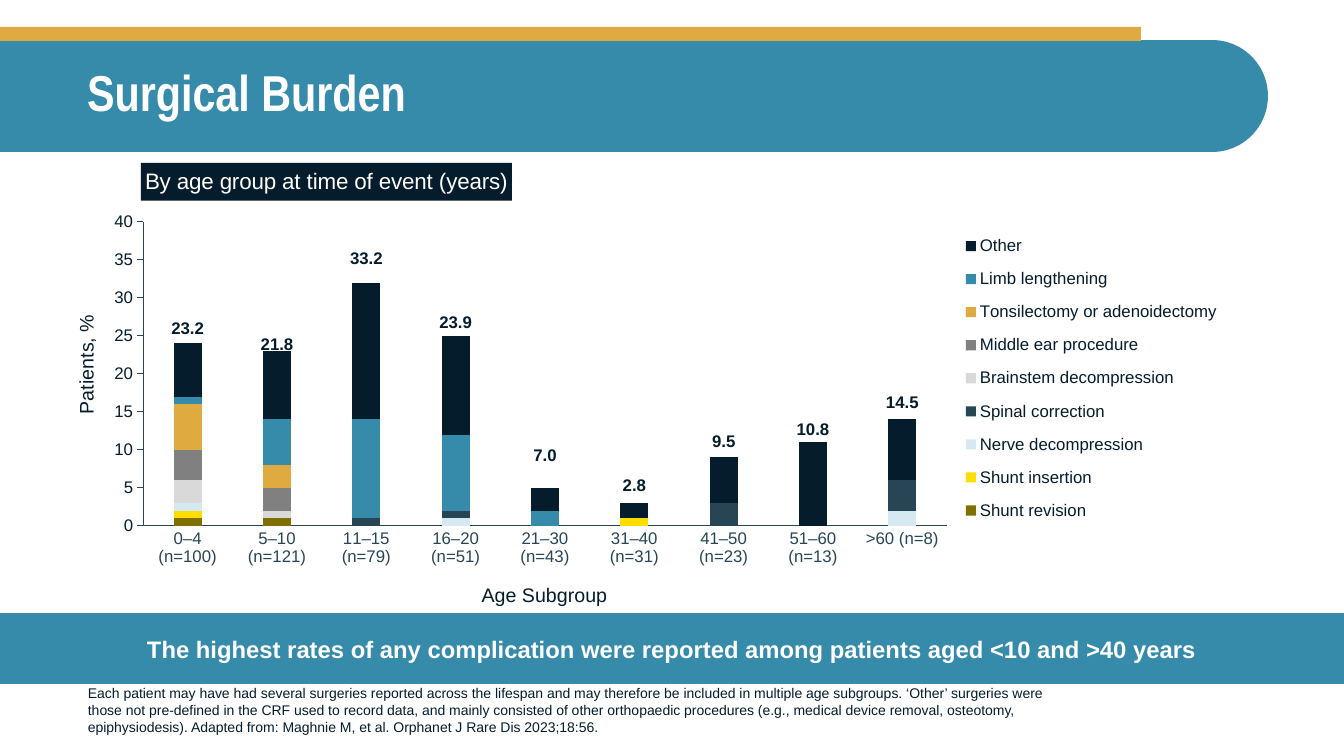
from pptx import Presentation
from pptx.chart.data import CategoryChartData
from pptx.dml.color import RGBColor
from pptx.enum.chart import XL_CHART_TYPE as ChartType, XL_LEGEND_POSITION as LegendPos, XL_TICK_MARK as Tick
from pptx.enum.shapes import MSO_SHAPE as Shape
from pptx.enum.text import MSO_ANCHOR as Anchor, MSO_AUTO_SIZE as AutoSize, PP_ALIGN as Align
from pptx.oxml import parse_xml
from pptx.oxml.ns import nsdecls, qn
from pptx.util import Emu, Pt

PX = 914400 / 100.8
NAVY = RGBColor(0x05, 0x1C, 0x2C)
TEAL = RGBColor(0x36, 0x8B, 0xAB)
GOLD = RGBColor(0xDF, 0xAA, 0x40)
SLATE = RGBColor(0x27, 0x45, 0x54)
WHITE = RGBColor(0xFF, 0xFF, 0xFF)
GREY = RGBColor(0x80, 0x80, 0x80)
PALE_GREY = RGBColor(0xD9, 0xD9, 0xD9)
PALE_BLUE = RGBColor(0xD4, 0xE9, 0xF1)
YELLOW = RGBColor(0xFE, 0xDD, 0x00)
OLIVE = RGBColor(0x7F, 0x6E, 0x00)

AGE_GROUPS = ["0–4 (n=100)", "5–10 (n=121)", "11–15 (n=79)", "16–20 (n=51)", "21–30 (n=43)",
              "31–40 (n=31)", "41–50 (n=23)", "51–60 (n=13)", ">60 (n=8)"]
SURGERIES = [
    ("Shunt revision", OLIVE, [1, 1, None, None, None, None, None, None, None]),
    ("Shunt insertion", YELLOW, [1, None, None, None, 0, 1, None, None, None]),
    ("Nerve decompression", PALE_BLUE, [1, None, 0, 1, 0, None, None, None, 2]),
    ("Spinal correction", SLATE, [None, None, 1, 1, 0, None, 3, None, 4]),
    ("Brainstem decompression", PALE_GREY, [3, 1, None, None, 0, None, None, None, None]),
    ("Middle ear procedure", GREY, [4, 3, 0, None, None, None, None, None, None]),
    ("Tonsilectomy or adenoidectomy", GOLD, [6, 3, 0, None, None, None, None, None, None]),
    ("Limb lengthening", TEAL, [1, 6, 13, 10, 2, None, None, None, None]),
    ("Other", NAVY, [7, 9, 18, 13, 3, 2, 6, 11, 8]),
]
TOTALS = [("23.2", 328), ("21.8", 344), ("33.2", 258), ("23.9", 322), ("7.0", 455),
          ("2.8", 485), ("9.5", 441), ("10.8", 429), ("14.5", 402)]


def px(*lengths):
    """Turn pixel lengths into EMU."""
    return [Emu(round(length * PX)) for length in lengths]


def write(frame, text, size, color=NAVY, bold=False, font="Arial", align=Align.LEFT,
          anchor=Anchor.TOP, wrap=True, spacing=1.0):
    """Put one formatted paragraph into a text frame."""
    frame.auto_size = AutoSize.NONE
    frame.word_wrap = wrap
    frame.vertical_anchor = anchor
    paragraph = frame.paragraphs[0]
    paragraph.alignment = align
    paragraph.line_spacing = spacing
    paragraph.space_before = Pt(0)
    run = paragraph.add_run()
    run.text = text
    set_font(run.font, size, color, bold, font)


def set_font(target, size, color=NAVY, bold=False, font="Arial"):
    """Set the look of a font object."""
    target.name, target.size, target.bold = font, Pt(size), bold
    target.color.rgb = color


def add_label(slide, box, text, size, **look):
    """Add a text box holding one label."""
    label = slide.shapes.add_textbox(*px(*box))
    write(label.text_frame, text, size, **look)
    return label


def add_block(slide, kind, box, color):
    """Add a flat coloured shape."""
    block = slide.shapes.add_shape(kind, *px(*box))
    block.shadow.inherit = False
    block.fill.solid()
    block.fill.fore_color.rgb = color
    block.line.fill.background()
    return block


def move(placeholder, box):
    """Move a placeholder to a box."""
    placeholder.left, placeholder.top, placeholder.width, placeholder.height = px(*box)


def add_header(slide, box):
    """Draw the rounded band, the gold strip and the title."""
    left, top, width, height = box
    turned = (left + (width - height) / 2, top + (height - width) / 2, height, width)
    band = add_block(slide, Shape.ROUND_2_SAME_RECTANGLE, turned, TEAL)
    band.rotation = 270
    band.adjustments[0], band.adjustments[1] = 0, 0.5
    add_block(slide, Shape.RECTANGLE, (left, top - 13, 1141, 14), GOLD)
    title = slide.shapes.title
    move(title, (left + 77, top, 1190, 111))
    write(title.text_frame, "Surgical Burden", 36, color=WHITE, bold=True,
          font="Arial Narrow", anchor=Anchor.MIDDLE, spacing=0.9)
    tree = slide.shapes.element
    tree.remove(title.element)
    tree.append(title.element)


def set_layout(element, index, box, outer):
    """Place a chart part by a box measured inside the chart."""
    old = element.find(qn("c:layout"))
    if old is not None:
        element.remove(old)
    x, y, w, h = (round(a / b, 4) for a, b in zip(box, (outer[2], outer[3]) * 2))
    target = '<c:layoutTarget val="inner"/>' if element.tag == qn("c:plotArea") else ""
    size = f'<c:w val="{w}"/><c:h val="{h}"/>' if w else ""
    element.insert(index, parse_xml(
        f'<c:layout {nsdecls("c")}><c:manualLayout>{target}<c:xMode val="edge"/>'
        f'<c:yMode val="edge"/><c:x val="{x}"/><c:y val="{y}"/>{size}</c:manualLayout></c:layout>'))


def add_surgery_chart(slide, box):
    """Add the stacked columns with totals and axis titles."""
    data = CategoryChartData(number_format="0")
    data.categories = AGE_GROUPS
    for name, _, values in SURGERIES:
        data.add_series(name, values)
    chart = slide.shapes.add_chart(ChartType.COLUMN_STACKED, *px(*box), data).chart
    set_font(chart.font, 10)
    columns = chart.plots[0]
    columns.gap_width, columns.overlap, columns.vary_by_categories = 219, 100, False
    for series, (_, color, _) in zip(columns.series, SURGERIES):
        series.format.fill.solid()
        series.format.fill.fore_color.rgb = color

    ages, percent = chart.category_axis, chart.value_axis
    percent.minimum_scale, percent.maximum_scale, percent.major_unit = 0, 40, 5
    percent.has_major_gridlines = False
    percent.tick_labels.number_format = "0"
    percent.tick_labels.number_format_is_linked = False
    for axis, tick, color in ((ages, Tick.NONE, SLATE), (percent, Tick.OUTSIDE, NAVY)):
        axis.major_tick_mark, axis.minor_tick_mark = tick, Tick.NONE
        set_font(axis.tick_labels.font, 12, color)
        axis.format.line.color.rgb = SLATE
        axis.format.line.width = Pt(0.75)

    chart.has_legend = True
    chart.legend.position = LegendPos.RIGHT
    chart.legend.include_in_layout = False
    set_font(chart.legend.font, 12)
    chart.has_title = True
    heading = chart.chart_title
    heading.format.fill.solid()
    heading.format.fill.fore_color.rgb = NAVY
    run = heading.text_frame.paragraphs[0].add_run()
    run.text = "By age group at time of event (years)"
    set_font(run.font, 16, WHITE)
    plot = (65, 66, 804, 304)
    for tag, index, part in (("c:title", 1, (63, 7, 0, 0)), ("c:plotArea", 0, plot),
                             ("c:legend", 1, (882, 66, 263, 313))):
        set_layout(chart.element.find(".//" + qn(tag)), index, part, box)

    left, top = box[:2]
    add_label(slide, (left - 57, top + 186, 130, 34), "Patients, %", 14).rotation = 270
    step = plot[2] / len(TOTALS)
    for i, (total, middle) in enumerate(TOTALS):
        center = left + plot[0] + (i + 0.5) * step
        add_label(slide, (center - 27, middle - 15, 54, 30), total, 12,
                  bold=True, align=Align.CENTER, wrap=False)
    add_label(slide, (left + 373, top + 422, 187, 34), "Age Subgroup", 14, align=Align.CENTER)


def add_message(slide, box):
    """Fill the body placeholder with the key message."""
    message = slide.placeholders[1]
    move(message, box)
    message.fill.solid()
    message.fill.fore_color.rgb = TEAL
    frame = message.text_frame
    frame.margin_left, frame.margin_right = px(80, 80)
    properties = frame.paragraphs[0]._p.get_or_add_pPr()
    properties.set("marL", "0")
    properties.set("indent", "0")
    properties.append(parse_xml(f'<a:buNone {nsdecls("a")}/>'))
    write(frame, "The highest rates of any complication were reported among patients "
          "aged <10 and >40 years", 17, color=WHITE, bold=True,
          align=Align.CENTER, anchor=Anchor.MIDDLE)


def add_footnote(slide, box):
    """Add the source note under the message."""
    add_label(slide, box, "Each patient may have had several surgeries reported across the lifespan "
              "and may therefore be included in multiple age subgroups. ‘Other’ surgeries were those "
              "not pre-defined in the CRF used to record data, and mainly consisted of other "
              "orthopaedic procedures (e.g., medical device removal, osteotomy, epiphysiodesis). "
              "Adapted from: Maghnie M, et al. Orphanet J Rare Dis 2023;18:56.",
              10, anchor=Anchor.BOTTOM)


def main():
    """Build and save the slide."""
    deck = Presentation()
    deck.slide_width, deck.slide_height = px(1344, 756)
    slide = deck.slides.add_slide(deck.slide_layouts[1])
    add_header(slide, (0, 40, 1268, 112))
    add_surgery_chart(slide, (78, 156, 1189, 445))
    add_message(slide, (0, 613, 1344, 71))
    add_footnote(slide, (78, 683, 996, 57))
    deck.save("out.pptx")


if __name__ == "__main__":
    main()
